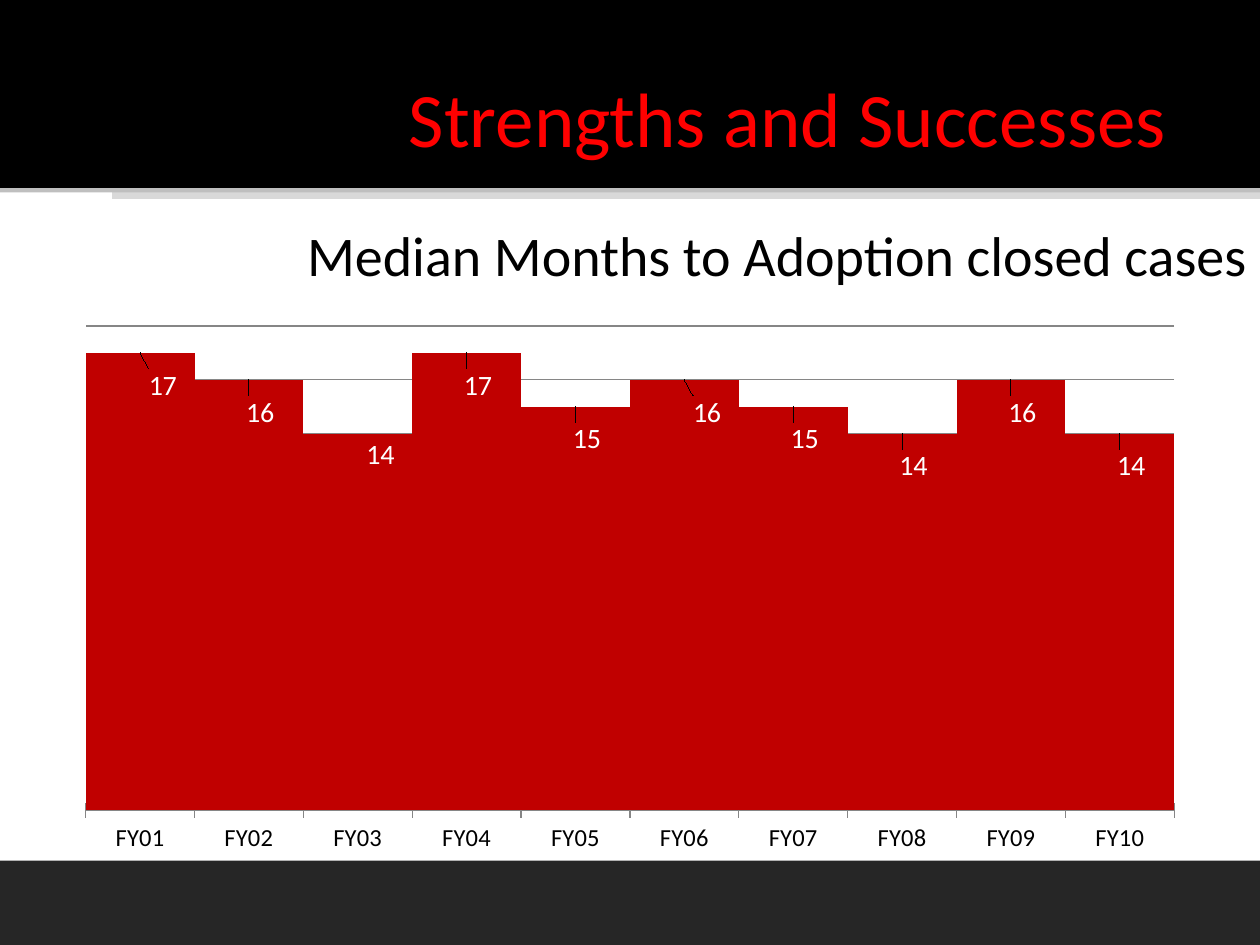
from lxml import etree
from pptx import Presentation
from pptx.chart.data import CategoryChartData
from pptx.dml.color import RGBColor
from pptx.enum.chart import XL_CHART_TYPE, XL_LABEL_POSITION, XL_TICK_LABEL_POSITION, XL_TICK_MARK
from pptx.enum.shapes import MSO_SHAPE
from pptx.enum.text import MSO_ANCHOR, PP_ALIGN
from pptx.oxml.ns import qn
from pptx.util import Cm, Pt

RECT = MSO_SHAPE.RECTANGLE
COLUMNS = XL_CHART_TYPE.COLUMN_CLUSTERED
OUTSIDE_END = XL_LABEL_POSITION.OUTSIDE_END
NO_LABELS = XL_TICK_LABEL_POSITION.NONE
NO_TICK, CROSS_TICK = XL_TICK_MARK.NONE, XL_TICK_MARK.CROSS
MIDDLE, RIGHT = MSO_ANCHOR.MIDDLE, PP_ALIGN.RIGHT

FONT = "Calibri"
COLORS = {
    "black": "000000", "white": "FFFFFF", "title": "FF0000", "column": "C00000",
    "footer": "262626", "edge": "BFBFBF", "shade": "D9D9D9", "axis": "868686",
}
MONTHS = [17, 16, 14, 17, 15, 16, 15, 14, 16, 14]
LABEL_SHIFTS = [
    (0.02, 0.1), (0.01, 0.1), (0.02, 0.08), (0.01, 0.1), (0.01, 0.1),
    (0.02, 0.1), (0.01, 0.1), (0.01, 0.1), (0.01, 0.1), (0.01, 0.1),
]


def rgb(name):
    return RGBColor.from_string(COLORS[name])


def set_font(font, size, color):
    font.name = FONT
    font.size = Pt(size)
    font.color.rgb = rgb(color)


def add_band(s, x, y, w, h, color):
    sp = s.shapes.add_shape(RECT, Cm(x), Cm(y), Cm(w), Cm(h))
    sp.shadow.inherit = False
    sp.fill.solid()
    sp.fill.fore_color.rgb = rgb(color)
    sp.line.fill.background()


def add_text(s, text, x, y, w, h, size=32, color="black", align=RIGHT):
    tf = s.shapes.add_textbox(Cm(x), Cm(y), Cm(w), Cm(h)).text_frame
    tf.word_wrap = True
    tf.vertical_anchor = MIDDLE
    p = tf.paragraphs[0]
    p.alignment = align
    r = p.add_run()
    r.text = text
    set_font(r.font, size, color)


def manual_layout(**values):
    layout = etree.Element(qn("c:layout"))
    manual = etree.SubElement(layout, qn("c:manualLayout"))
    for tag, value in values.items():
        etree.SubElement(manual, qn(f"c:{tag}")).set("val", str(value))
    return layout


def place_plot(chart, x, y, w, h):
    area = chart._chartSpace.chart.plotArea
    for old in area.findall(qn("c:layout")):
        area.remove(old)
    area.insert(0, manual_layout(layoutTarget="inner", xMode="edge", yMode="edge",
                                 x=x, y=y, w=w, h=h))


def label_columns(series):
    for i in range(len(MONTHS)):
        label = series.points[i].data_label
        set_font(label.font, 16, "white")
        label.position = OUTSIDE_END
    for element, (x, y) in zip(series._element.iter(qn("c:dLbl")), LABEL_SHIFTS):
        element.insert(1, manual_layout(x=x, y=y))


def format_axes(chart):
    cat, val = chart.category_axis, chart.value_axis
    cat.major_tick_mark = CROSS_TICK
    set_font(cat.tick_labels.font, 14, "black")
    val.minimum_scale, val.maximum_scale, val.major_unit = 0, 18, 2
    val.major_tick_mark = NO_TICK
    val.tick_label_position = NO_LABELS
    val.format.line.fill.background()
    val.has_major_gridlines = True
    for line in (cat.format.line, val.major_gridlines.format.line):
        line.color.rgb = rgb("axis")
        line.width = Pt(0.75)


def add_months_chart(s, x, y, w, h):
    data = CategoryChartData()
    data.categories = [f"FY{year:02d}" for year in range(1, len(MONTHS) + 1)]
    data.add_series("Series 1", MONTHS)
    chart = s.shapes.add_chart(COLUMNS, Cm(x), Cm(y), Cm(w), Cm(h), data).chart
    set_font(chart.font, 10, "black")
    chart.has_legend = False
    chart.has_title = False
    plot = chart.plots[0]
    plot.gap_width = 0
    plot.vary_by_categories = False
    series = plot.series[0]
    series.format.fill.solid()
    series.format.fill.fore_color.rgb = rgb("column")
    label_columns(series)
    format_axes(chart)
    place_plot(chart, 0.02, 0.02, 0.96, 0.88)


def main():
    prs = Presentation()
    prs.slide_width, prs.slide_height = Cm(25.4), Cm(19.05)
    s = prs.slides.add_slide(prs.slide_layouts[6])
    add_band(s, 2.26, 3.63, 23.14, 0.38, "shade")
    add_band(s, 0, 3.5, 25.4, 0.38, "edge")
    add_band(s, 0, 0, 25.4, 3.79, "black")
    add_band(s, 0, 17.35, 25.4, 1.7, "footer")
    add_months_chart(s, 1.27, 6.35, 22.86, 11.1)
    add_text(s, "Median Months to Adoption closed cases", 2.54, 4.24, 22.86, 1.75)
    add_text(s, "Strengths and Successes ", 1.27, 0.76, 22.86, 3.18, size=44, color="title")
    prs.save("out.pptx")


if __name__ == "__main__":
    main()
